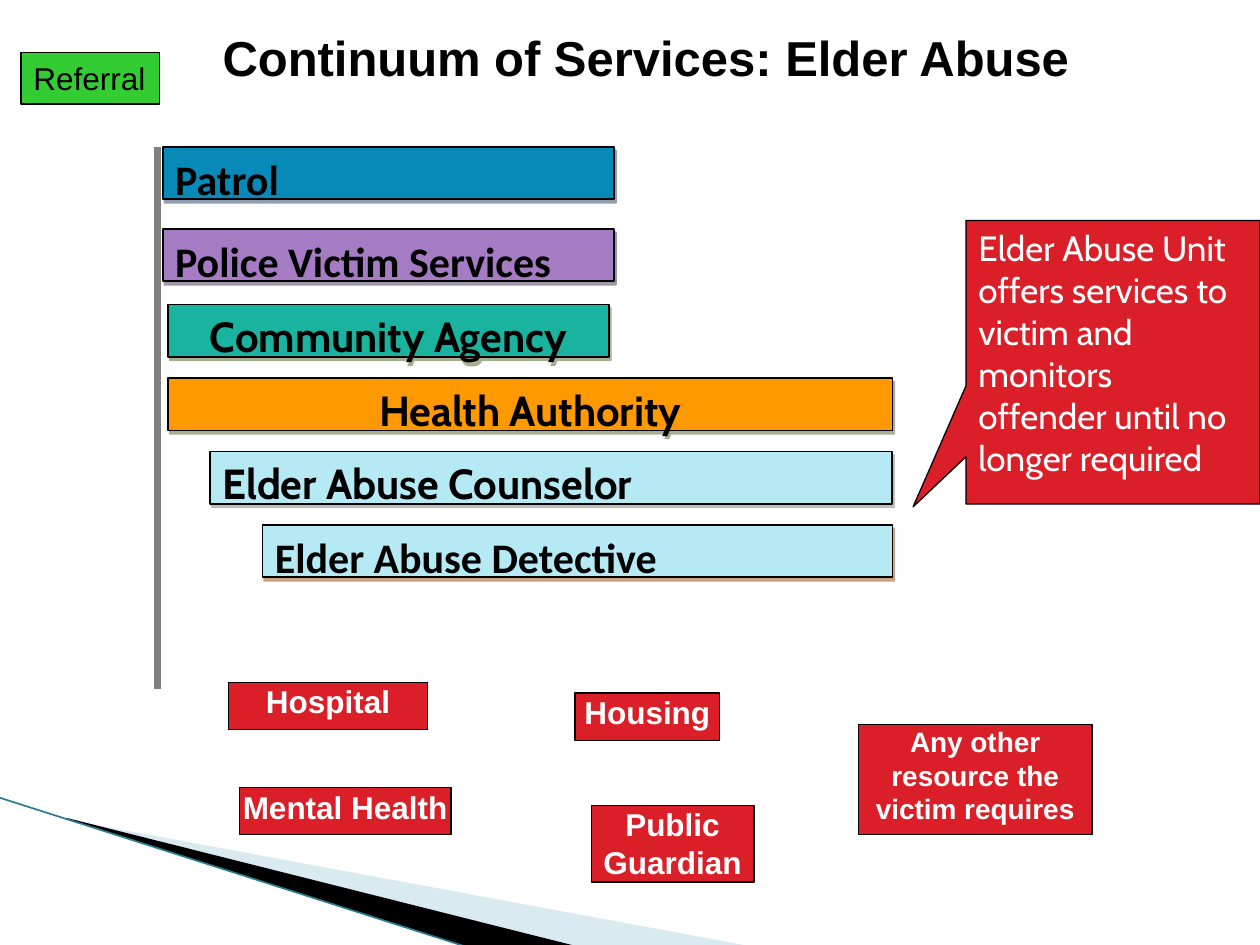
"""Build the slide on the continuum of services for elder abuse."""
from dataclasses import dataclass

from lxml.etree import SubElement
from pptx import Presentation
from pptx.dml.color import RGBColor
from pptx.enum.shapes import MSO_CONNECTOR, MSO_SHAPE
from pptx.enum.text import MSO_ANCHOR, MSO_AUTO_SIZE, PP_ALIGN
from pptx.oxml.ns import qn
from pptx.util import Inches, Pt

BLACK = RGBColor(0x00, 0x00, 0x00)
WHITE = RGBColor(0xFF, 0xFF, 0xFF)
RED = RGBColor(0xDA, 0x1F, 0x28)
GREEN = RGBColor(0x33, 0xCC, 0x33)
BLUE = RGBColor(0x08, 0x8A, 0xB8)
PURPLE = RGBColor(0xA5, 0x7C, 0xC4)
TEAL = RGBColor(0x1A, 0xB3, 0x9F)
ORANGE = RGBColor(0xFF, 0x99, 0x00)
SKY = RGBColor(0xB5, 0xE9, 0xF4)
GRAY = RGBColor(0x80, 0x80, 0x80)
MIST = RGBColor(0xA0, 0xCB, 0xDC)
EDGE = RGBColor(0x2A, 0x7A, 0x90)
NAVY_SHADE = RGBColor(0x24, 0x3F, 0x60)
PLUM_SHADE = RGBColor(0x3F, 0x31, 0x51)
OLIVE_SHADE = RGBColor(0x4E, 0x61, 0x28)
GRAY_SHADE = RGBColor(0x7F, 0x7F, 0x7F)
RUST_SHADE = RGBColor(0x97, 0x47, 0x06)

COLUMNS, ROWS = 240, 180
CELL = Inches(10) / COLUMNS
BAR_HEIGHT = 10


@dataclass(frozen=True)
class Area:
    """A block of grid cells."""
    column: float
    row: float
    columns: float
    rows: float

    def emu(self) -> list[int]:
        return [round(n * CELL) for n in (self.column, self.row, self.columns, self.rows)]


@dataclass(frozen=True)
class Lettering:
    """The look of a label."""
    font: str
    size: int
    color: RGBColor
    bold: bool = True
    align: PP_ALIGN = PP_ALIGN.LEFT


@dataclass(frozen=True)
class Service:
    """A shadowed bar on the timeline."""
    label: str
    column: float
    row: float
    columns: float
    fill: RGBColor
    shade: RGBColor
    font: str
    align: PP_ALIGN = PP_ALIGN.LEFT


@dataclass(frozen=True)
class Resource:
    """A red tile below the timeline."""
    label: str
    area: Area
    size: int = 18


SERVICES = [
    Service("Patrol", 31, 28, 86, BLUE, NAVY_SHADE, "Calibri"),
    Service("Police Victim Services", 31, 43.6, 86, PURPLE, PLUM_SHADE, "Calibri"),
    Service("Community Agency", 32, 58, 84, TEAL, OLIVE_SHADE, "Cabin", PP_ALIGN.CENTER),
    Service("Health Authority", 32, 72, 138, ORANGE, OLIVE_SHADE, "Cabin", PP_ALIGN.CENTER),
    Service("Elder Abuse Counselor", 40, 86, 130, SKY, GRAY_SHADE, "Cabin"),
    Service("Elder Abuse Detective", 50, 100, 120, SKY, RUST_SHADE, "Calibri"),
]
RESOURCES = [
    Resource("Hospital", Area(43.5, 130, 38, 9)),
    Resource("Housing", Area(109.5, 132, 27.6, 9)),
    Resource("Mental Health", Area(45.6, 150, 40.3, 9)),
    Resource("Public Guardian", Area(112.6, 153.4, 31, 14.6)),
    Resource("Any other resource the victim requires", Area(163.5, 138, 44.5, 21), 16),
]


def write(frame, text: str, style: Lettering) -> None:
    frame.vertical_anchor = MSO_ANCHOR.TOP
    paragraph = frame.paragraphs[0]
    paragraph.alignment = style.align
    run = paragraph.add_run()
    run.text = text
    run.font.name, run.font.size, run.font.bold = style.font, Pt(style.size), style.bold
    run.font.color.rgb = style.color


def add_box(slide, area: Area, fill: RGBColor, text: str, style: Lettering,
            kind: MSO_SHAPE = MSO_SHAPE.RECTANGLE, outline: float = 0.75):
    box = slide.shapes.add_shape(kind, *area.emu())
    box.shadow.inherit = False
    box.fill.solid()
    box.fill.fore_color.rgb = fill
    box.line.color.rgb = BLACK
    box.line.width = Pt(outline)
    box.text_frame.word_wrap = True
    write(box.text_frame, text, style)
    return box


def add_service(slide, service: Service) -> None:
    area = Area(service.column, service.row, service.columns, BAR_HEIGHT)
    style = Lettering(service.font, 24, BLACK, align=service.align)
    bar = add_box(slide, area, service.fill, service.label, style, outline=1)
    effects = bar._element.spPr.find(qn("a:effectLst"))
    shadow = SubElement(effects, qn("a:outerShdw"), dist=str(Pt(2.2)),
                        dir=str(63 * 60000), algn="ctr", rotWithShape="0")
    color = SubElement(shadow, qn("a:srgbClr"), val=str(service.shade))
    SubElement(color, qn("a:alpha"), val="50000")


def add_resource(slide, resource: Resource) -> None:
    style = Lettering("Arial", resource.size, WHITE, align=PP_ALIGN.CENTER)
    frame = add_box(slide, resource.area, RED, resource.label, style).text_frame
    frame.margin_left = frame.margin_right = frame.margin_top = frame.margin_bottom = 0


def add_line(slide, start: tuple[float, float], end: tuple[float, float],
             color: RGBColor, width: float) -> None:
    ends = [round(n * CELL) for n in (*start, *end)]
    line = slide.shapes.add_connector(MSO_CONNECTOR.STRAIGHT, *ends)
    line.line.color.rgb = color
    line.line.width = Pt(width)
    SubElement(line._element.spPr, qn("a:effectLst"))


def add_sweep(slide, corners: list[tuple[float, float]], fill: RGBColor, opacity: int) -> None:
    first, *rest = [(round(x * CELL), round(y * CELL)) for x, y in corners]
    builder = slide.shapes.build_freeform(*first)
    builder.add_line_segments(rest, close=True)
    sweep = builder.convert_to_shape()
    sweep.shadow.inherit = False
    sweep.fill.solid()
    sweep.fill.fore_color.rgb = fill
    sweep.line.fill.background()
    color = sweep._element.spPr.find(qn("a:solidFill")).find(qn("a:srgbClr"))
    SubElement(color, qn("a:alpha"), val=str(opacity * 1000))


def fit_to_text(frame) -> None:
    frame.word_wrap = False
    frame.auto_size = MSO_AUTO_SIZE.SHAPE_TO_FIT_TEXT


def main() -> None:
    deck = Presentation()
    deck.slide_width, deck.slide_height = round(COLUMNS * CELL), round(ROWS * CELL)
    slide = deck.slides.add_slide(deck.slide_layouts[5])

    title = slide.shapes.title
    title.left, title.top, title.width, title.height = Area(40, 4, 168, 13.7).emu()
    write(title.text_frame, "Continuum of Services: Elder Abuse", Lettering("Arial", 28, BLACK))
    fit_to_text(title.text_frame)

    add_sweep(slide, [(13.2, 156.2), (142.8, 180.2), (109.4, 180.2), (13.2, 156)], MIST, 40)
    add_sweep(slide, [(12.7, 155.8), (109.7, 180.2), (89.3, 180.5), (13, 156)], BLACK, 100)
    add_line(slide, (-0.2, 151.9), (89.3, 180.5), EDGE, 0.95)

    for service in SERVICES:
        add_service(slide, service)
    add_line(slide, (30, 28), (30, 131.3), GRAY, 4.5)

    callout = add_box(
        slide, Area(184, 42, 56, 54), RED,
        "Elder Abuse Unit offers services to victim and monitors offender until no longer required",
        Lettering("Cabin", 20, WHITE, bold=False), MSO_SHAPE.RECTANGULAR_CALLOUT)
    callout.adjustments[0], callout.adjustments[1] = -0.68, 0.51

    for resource in RESOURCES:
        add_resource(slide, resource)
    referral = add_box(slide, Area(4, 10, 26.4, 9.8), GREEN, "Referral",
                       Lettering("Arial", 18, BLACK, bold=False))
    fit_to_text(referral.text_frame)
    deck.save("out.pptx")


if __name__ == "__main__":
    main()
